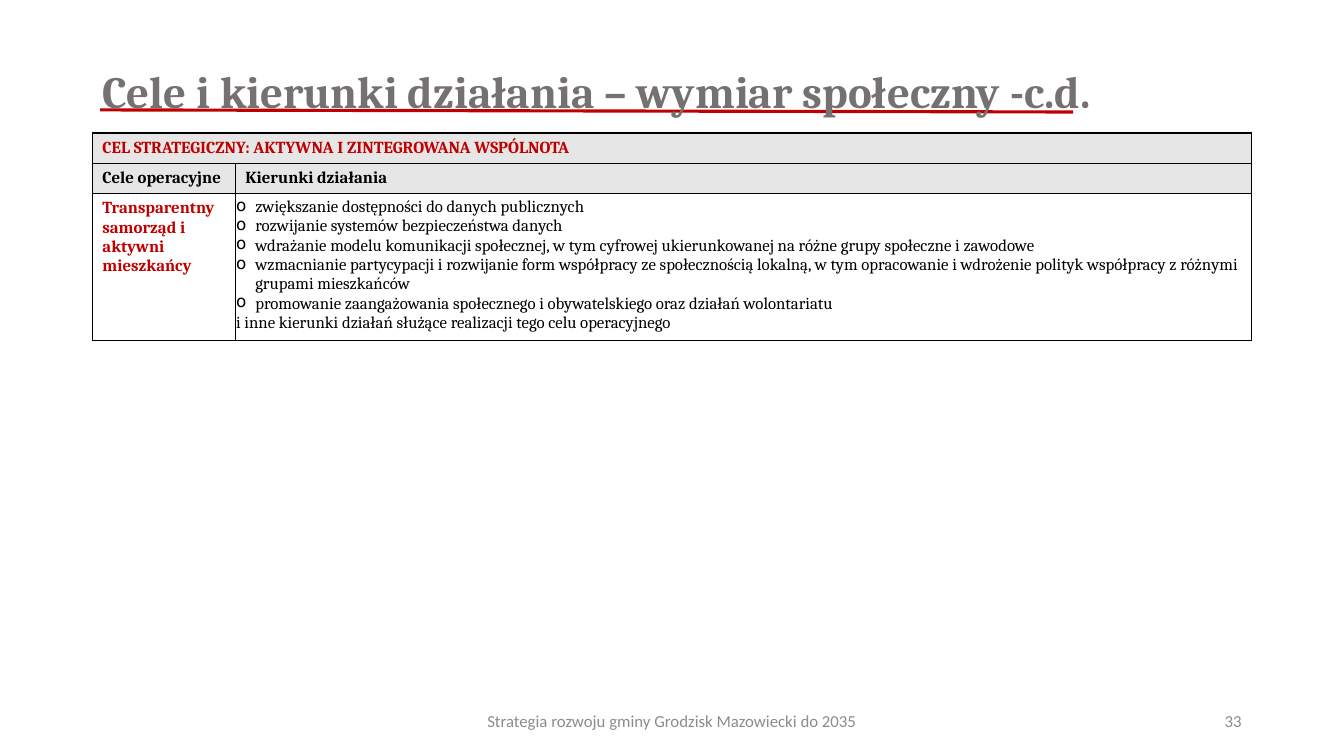
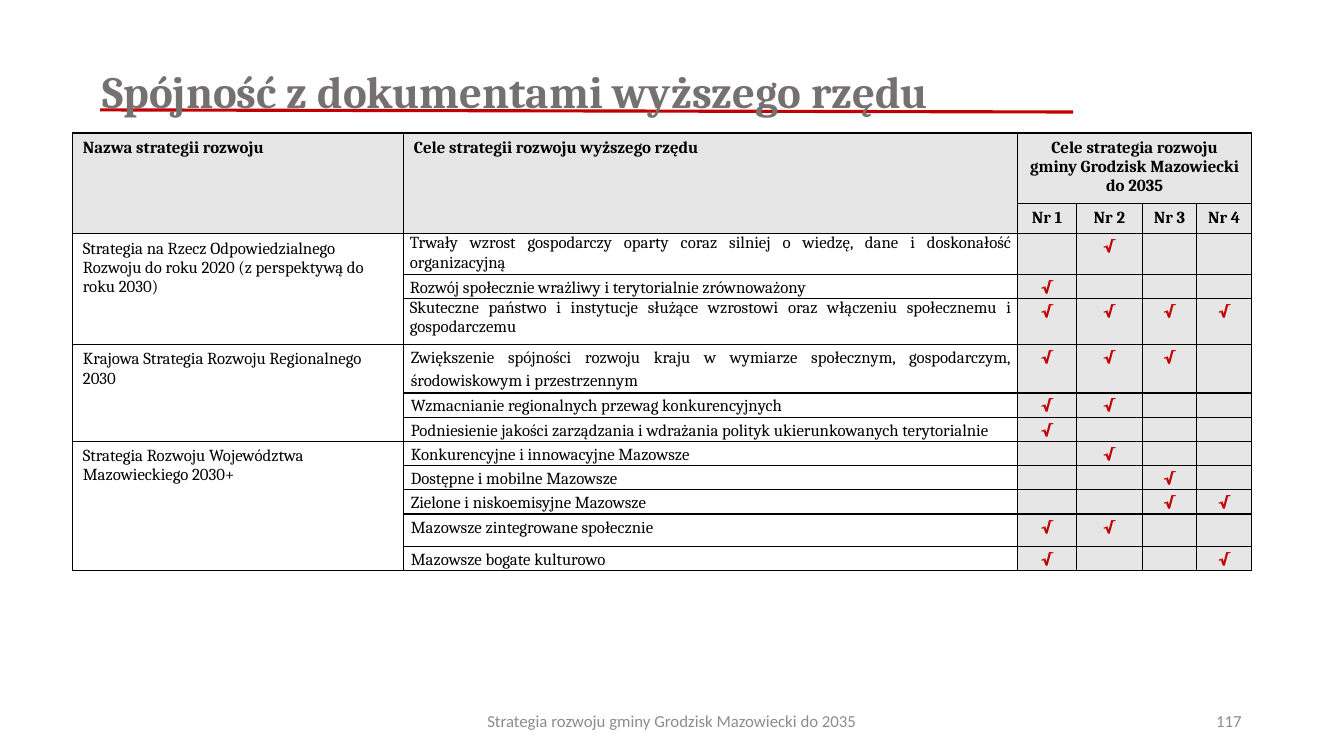
from dataclasses import dataclass
from typing import Optional

from lxml import etree
from pptx import Presentation
from pptx.dml.color import RGBColor
from pptx.enum import shapes, text
from pptx.oxml.ns import qn
from pptx.util import Pt

RED, GREY, BLACK = "C00000", "767171", "000000"
HEADER_FILL, FOOTER_GREY = "E7E6E6", "8C8C8C"
HEADING_FONT, FOOTER_FONT = "Cambria", "Calibri"
LEFT = text.PP_ALIGN.LEFT
CENTER = text.PP_ALIGN.CENTER
RIGHT = text.PP_ALIGN.RIGHT
JUSTIFY = text.PP_ALIGN.JUSTIFY
TOP = text.MSO_ANCHOR.TOP
MIDDLE = text.MSO_ANCHOR.MIDDLE
FOOTER = "Strategia rozwoju gminy Grodzisk Mazowiecki do 2035"
TABLE_TOP = 95
BULLET_INDENT = 13.7
CELL_INSETS = (7.2, 3.6, 7.2, 3.6)


@dataclass(frozen=True)
class Goal:
    text: str
    marks: tuple[int, ...]
    height: float = 16.5
    spacing: float = 1.2


@dataclass(frozen=True)
class Strategy:
    name: tuple[str, ...]
    side_inset: float
    goals: tuple[Goal, ...]


DIRECTIONS = (
    "zwiększanie dostępności do danych publicznych",
    "rozwijanie systemów bezpieczeństwa danych",
    "wdrażanie modelu komunikacji społecznej, w tym cyfrowej ukierunkowanej "
    "na różne grupy społeczne i zawodowe",
    "wzmacnianie partycypacji i rozwijanie form współpracy ze społecznością lokalną, "
    "w tym opracowanie i wdrożenie polityk współpracy z różnymi grupami mieszkańców",
    "promowanie zaangażowania społecznego i obywatelskiego oraz działań wolontariatu",
)

STRATEGIES = (
    Strategy(
        ("Strategia na Rzecz Odpowiedzialnego",
         "Rozwoju do roku 2020 (z perspektywą do roku 2030)"),
        4.3,
        (
            Goal("Trwały wzrost gospodarczy oparty coraz silniej o wiedzę, dane "
                 "i doskonałość organizacyjną", (2,), 28, 1),
            Goal("Rozwój społecznie wrażliwy i terytorialnie zrównoważony", (1,)),
            Goal("Skuteczne państwo i instytucje służące wzrostowi oraz włączeniu "
                 "społecznemu i gospodarczemu", (1, 2, 3, 4), 33, 1),
        ),
    ),
    Strategy(
        ("Krajowa Strategia Rozwoju Regionalnego 2030",),
        5,
        (
            Goal("Zwiększenie spójności rozwoju kraju w wymiarze społecznym, "
                 "gospodarczym, środowiskowym i przestrzennym", (1, 2, 3), 33.5),
            Goal("Wzmacnianie regionalnych przewag konkurencyjnych", (1, 2)),
            Goal("Podniesienie jakości zarządzania i wdrażania polityk "
                 "ukierunkowanych terytorialnie", (1,)),
        ),
    ),
    Strategy(
        ("Strategia Rozwoju Województwa Mazowieckiego 2030+",),
        5,
        (
            Goal("Konkurencyjne i innowacyjne Mazowsze", (2,)),
            Goal("Dostępne i mobilne Mazowsze", (3,)),
            Goal("Zielone i niskoemisyjne Mazowsze", (3, 4)),
            Goal("Mazowsze zintegrowane społecznie", (1, 2), 23),
            Goal("Mazowsze bogate kulturowo", (1, 4)),
        ),
    ),
)


def color(value: str) -> RGBColor:
    return RGBColor.from_string(value)


def write(frame, content: str, *, size: float = 12, font: str = HEADING_FONT,
          ink: str = BLACK, bold: bool = False, align=LEFT,
          spacing=None, bullet: Optional[str] = None) -> None:
    """Add a paragraph, using the first one while it is still empty."""
    paragraph = frame.paragraphs[0]
    if paragraph.runs:
        paragraph = frame.add_paragraph()
    if bullet:
        properties = paragraph._p.get_or_add_pPr()
        properties.set("marL", str(Pt(BULLET_INDENT)))
        properties.set("indent", str(-Pt(BULLET_INDENT)))
        etree.SubElement(properties, qn("a:buChar")).set("char", bullet)
    paragraph.alignment = align
    if spacing is not None:
        paragraph.line_spacing = spacing
    run = paragraph.add_run()
    run.text = content
    run.font.size = Pt(size)
    run.font.name = font
    run.font.bold = bold
    run.font.color.rgb = color(ink)


def add_text(slide, left: float, top: float, width: float, height: float,
             content: str, **style) -> None:
    frame = slide.shapes.add_textbox(Pt(left), Pt(top), Pt(width), Pt(height)).text_frame
    frame.word_wrap = True
    frame.vertical_anchor = MIDDLE
    write(frame, content, **style)


def add_slide(presentation, title: str, number: int):
    """Add a slide with the shared title, red rule and footer."""
    slide = presentation.slides.add_slide(presentation.slide_layouts[6])
    rule = slide.shapes.add_connector(
        shapes.MSO_CONNECTOR.STRAIGHT, Pt(71.5), Pt(78.5), Pt(766.5), Pt(80))
    rule.line.color.rgb = color(RED)
    rule.line.width = Pt(2.25)
    etree.SubElement(rule._element.spPr, qn("a:effectLst"))
    add_text(slide, 66, 20, 828, 75, title, size=32, ink=GREY, bold=True, spacing=Pt(52.8))
    footer_style = dict(font=FOOTER_FONT, ink=FOOTER_GREY)
    add_text(slide, 318, 500.5, 324, 28.75, FOOTER, align=CENTER, **footer_style)
    add_text(slide, 678, 500.5, 216, 28.75, str(number), align=RIGHT, **footer_style)
    return slide


def add_borders(cell) -> None:
    properties = cell._tc.get_or_add_tcPr()
    for side in ("lnL", "lnR", "lnT", "lnB"):
        border = etree.SubElement(properties, qn(f"a:{side}"), w=str(Pt(1)))
        fill = etree.SubElement(border, qn("a:solidFill"))
        etree.SubElement(fill, qn("a:srgbClr"), val=BLACK)


def add_grid(slide, left: float, widths: list[float], heights: list[float]):
    """Add a bordered, unfilled table whose empty cells do not stretch the rows."""
    table = slide.shapes.add_table(
        len(heights), len(widths), Pt(left), Pt(TABLE_TOP),
        Pt(sum(widths)), Pt(sum(heights))).table
    table.first_row = table.horz_banding = False
    for column, width in zip(table.columns, widths):
        column.width = Pt(width)
    for row, height in zip(table.rows, heights):
        row.height = Pt(height)
    for cell in table.iter_cells():
        add_borders(cell)
        cell.fill.background()
        cell.margin_top = cell.margin_bottom = 0
        paragraph = cell.text_frame.paragraphs[0]
        etree.SubElement(paragraph._p, qn("a:endParaRPr"), sz="1200")
    return table


def shade(cell) -> None:
    cell.fill.solid()
    cell.fill.fore_color.rgb = color(HEADER_FILL)


def fill_cell(cell, *lines: str, insets=CELL_INSETS, anchor=TOP, **style) -> None:
    cell.margin_left, cell.margin_top, cell.margin_right, cell.margin_bottom = map(Pt, insets)
    cell.vertical_anchor = anchor
    for line in lines:
        write(cell.text_frame, line, **style)


def add_header(cell, content: str, **style) -> None:
    shade(cell)
    fill_cell(cell, content, bold=True, **style)


def build_goals_slide(presentation) -> None:
    slide = add_slide(presentation, "Cele i kierunki działania – wymiar społeczny -c.d.", 33)
    table = add_grid(slide, 66, [102, 726], [21, 21, 101])
    table.cell(0, 0).merge(table.cell(0, 1))
    add_header(table.cell(0, 0), "CEL STRATEGICZNY: AKTYWNA I ZINTEGROWANA WSPÓLNOTA", ink=RED)
    add_header(table.cell(1, 0), "Cele operacyjne")
    add_header(table.cell(1, 1), "Kierunki działania")
    fill_cell(table.cell(2, 0), "Transparentny samorząd i aktywni mieszkańcy",
              ink=RED, bold=True)
    directions = table.cell(2, 1)
    fill_cell(directions, *DIRECTIONS, insets=(0.7, 0.7, 0.7, 3.6),
              anchor=MIDDLE, bullet="o")
    write(directions.text_frame,
          "i inne kierunki działań służące realizacji tego celu operacyjnego")


def build_consistency_slide(presentation) -> None:
    slide = add_slide(presentation, "Spójność z dokumentami wyższego rzędu", 117)
    goal_heights = [goal.height for strategy in STRATEGIES for goal in strategy.goals]
    table = add_grid(slide, 52, [236.5, 438.5, 42, 47, 39, 39], [49, 21, *goal_heights])

    for column, heading in enumerate(("Nazwa strategii rozwoju",
                                      "Cele strategii rozwoju wyższego rzędu")):
        table.cell(0, column).merge(table.cell(1, column))
        add_header(table.cell(0, column), heading)
    table.cell(0, 2).merge(table.cell(0, 5))
    add_header(table.cell(0, 2), "Cele strategia rozwoju gminy Grodzisk Mazowiecki do 2035",
               align=CENTER)
    for number in range(1, 5):
        add_header(table.cell(1, number + 1), f"Nr {number}", align=CENTER)

    row = 2
    for strategy in STRATEGIES:
        insets = (strategy.side_inset, 0, strategy.side_inset, 0)
        name_cell = table.cell(row, 0)
        name_cell.merge(table.cell(row + len(strategy.goals) - 1, 0))
        fill_cell(name_cell, *strategy.name)
        for goal in strategy.goals:
            fill_cell(table.cell(row, 1), goal.text, insets=insets,
                      align=JUSTIFY, spacing=goal.spacing)
            for number in range(1, 5):
                mark_cell = table.cell(row, number + 1)
                shade(mark_cell)
                if number in goal.marks:
                    fill_cell(mark_cell, "√", insets=insets, ink=RED, bold=True,
                              align=CENTER, spacing=1.2)
            row += 1


def main() -> None:
    presentation = Presentation()
    presentation.slide_width = Pt(960)
    presentation.slide_height = Pt(540)
    build_goals_slide(presentation)
    build_consistency_slide(presentation)
    presentation.save("out.pptx")


if __name__ == "__main__":
    main()
